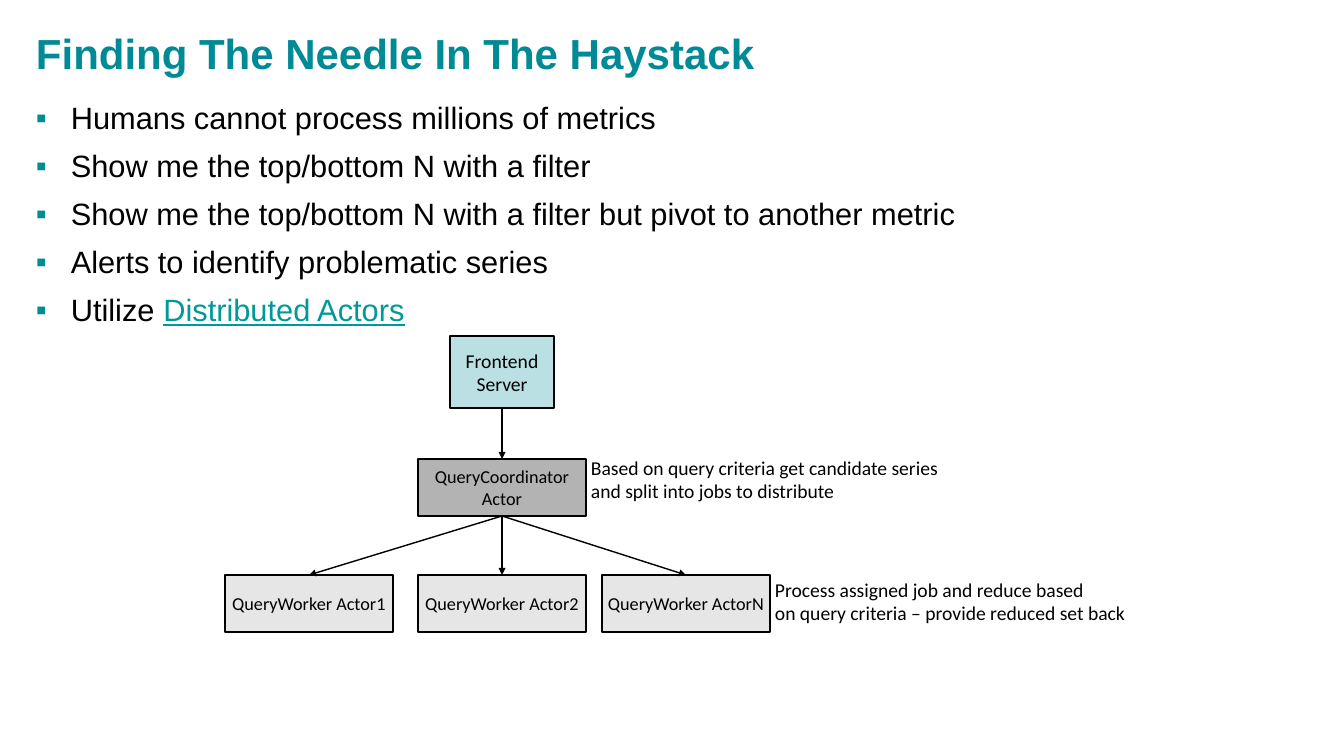
from lxml import etree
from pptx import Presentation, util as u
from pptx.dml.color import RGBColor
from pptx.enum import shapes, text
from pptx.oxml import ns

PX = 914400 / 50.4
COLORS = {"teal": "008A96", "link": "009999", "black": "000000",
          "server": "BBE0E3", "coordinator": "B3B3B3", "worker": "E6E6E6"}

TITLE = "Finding The Needle In The Haystack"
BULLETS = [
    ["Humans cannot process millions of metrics"],
    ["Show me the top/bottom N with a filter"],
    ["Show me the top/bottom N with a filter but pivot to another metric"],
    ["Alerts to identify problematic series"],
    ["Utilize ", "Distributed Actors"],
]
ACTOR_SIZE = (168, 57)
WORKER_TOP = 575
NODES = {
    "coordinator": (["QueryCoordinator Actor"], (418, 459, *ACTOR_SIZE), "coordinator", 26),
    "frontend": (["Frontend", "Server"], (450, 336, 104, 72), "server", 28),
}
for name, left in (("1", 225), ("2", 418), ("N", 602)):
    NODES[name] = ([f"QueryWorker Actor{name}"], (left, WORKER_TOP, *ACTOR_SIZE), "worker", 26)
LINKS = [("frontend", "coordinator"), ("coordinator", "1"),
         ("coordinator", "2"), ("coordinator", "N")]
LABELS = [
    (["Based on query criteria get candidate series",
      "and split into jobs to distribute"], (586, 453, 397, 52)),
    (["Process assigned job and reduce based",
      "on query criteria – provide reduced set back"], (770, 575, 402, 52)),
]


def px(*values):
    return [u.Emu(round(value * PX)) for value in values]


def color(name):
    return RGBColor.from_string(COLORS[name])


def assign(target, **values):
    for key, value in values.items():
        setattr(target, key, value)


def add_run(paragraph, words, size, font="Calibri", ink="black", **extra):
    run = paragraph.add_run()
    run.text = words
    assign(run.font, size=u.Pt(size), name=font, **extra)
    run.font.color.rgb = color(ink)


def write_lines(frame, lines, size, **extra):
    for index, line in enumerate(lines):
        paragraph = frame.add_paragraph() if index else frame.paragraphs[0]
        assign(paragraph, **extra)
        add_run(paragraph, line, size)


def add_box(slide, place, **extra):
    frame = slide.shapes.add_textbox(*px(*place)).text_frame
    assign(frame, word_wrap=True, **extra)
    return frame


def add_bullets(frame):
    for index, parts in enumerate(BULLETS):
        paragraph = frame.add_paragraph() if index else frame.paragraphs[0]
        properties = paragraph._p.get_or_add_pPr()
        indent = u.Inches(0.69)
        properties.set("marL", str(indent))
        properties.set("indent", str(-indent))
        bullet_color = etree.SubElement(properties, ns.qn("a:buClr"))
        etree.SubElement(bullet_color, ns.qn("a:srgbClr"), val=COLORS["teal"])
        etree.SubElement(properties, ns.qn("a:buFont"), typeface="Arial")
        etree.SubElement(properties, ns.qn("a:buChar"), char="▪")
        assign(paragraph, line_spacing=0.9, space_before=u.Pt(21 if index else 0))
        add_run(paragraph, parts[0], 44, "Arial")
        for linked in parts[1:]:
            add_run(paragraph, linked, 44, "Arial", "link", underline=True)


def add_node(slide, lines, place, fill, size):
    shape = slide.shapes.add_shape(shapes.MSO_SHAPE.RECTANGLE, *px(*place))
    shape.shadow.inherit = False
    shape.fill.solid()
    shape.fill.fore_color.rgb = color(fill)
    shape.line.color.rgb = color("black")
    shape.line.width = u.Pt(2)
    assign(shape.text_frame, word_wrap=True, vertical_anchor=text.MSO_ANCHOR.MIDDLE)
    write_lines(shape.text_frame, lines, size, alignment=text.PP_ALIGN.CENTER)
    return shape


def add_arrow(slide, source, target):
    connector = slide.shapes.add_connector(shapes.MSO_CONNECTOR.STRAIGHT, 0, 0, 0, 0)
    connector.begin_connect(source, 2)
    connector.end_connect(target, 0)
    connector.line.color.rgb = color("black")
    connector.line.width = u.Pt(2)
    etree.SubElement(connector.line._get_or_add_ln(), ns.qn("a:tailEnd"),
                     type="triangle", w="lg", len="lg")
    etree.SubElement(connector._element.spPr, ns.qn("a:effectLst"))


def main():
    presentation = Presentation()
    presentation.slide_width, presentation.slide_height = px(1344, 756)
    slide = presentation.slides.add_slide(presentation.slide_layouts[6])

    margins = {f"margin_{side}": u.Inches(0.04) for side in ("left", "right", "top", "bottom")}
    title = add_box(slide, (34, 13, 1276, 79), vertical_anchor=text.MSO_ANCHOR.MIDDLE, **margins)
    add_run(title.paragraphs[0], TITLE, 60, "Arial", "teal", bold=True)
    add_bullets(add_box(slide, (34, 101, 1276, 581), **margins))

    nodes = {name: add_node(slide, *node) for name, node in NODES.items()}
    for source, target in LINKS:
        add_arrow(slide, nodes[source], nodes[target])
    for lines, place in LABELS:
        write_lines(add_box(slide, place), lines, 28)

    presentation.save("out.pptx")


if __name__ == "__main__":
    main()
